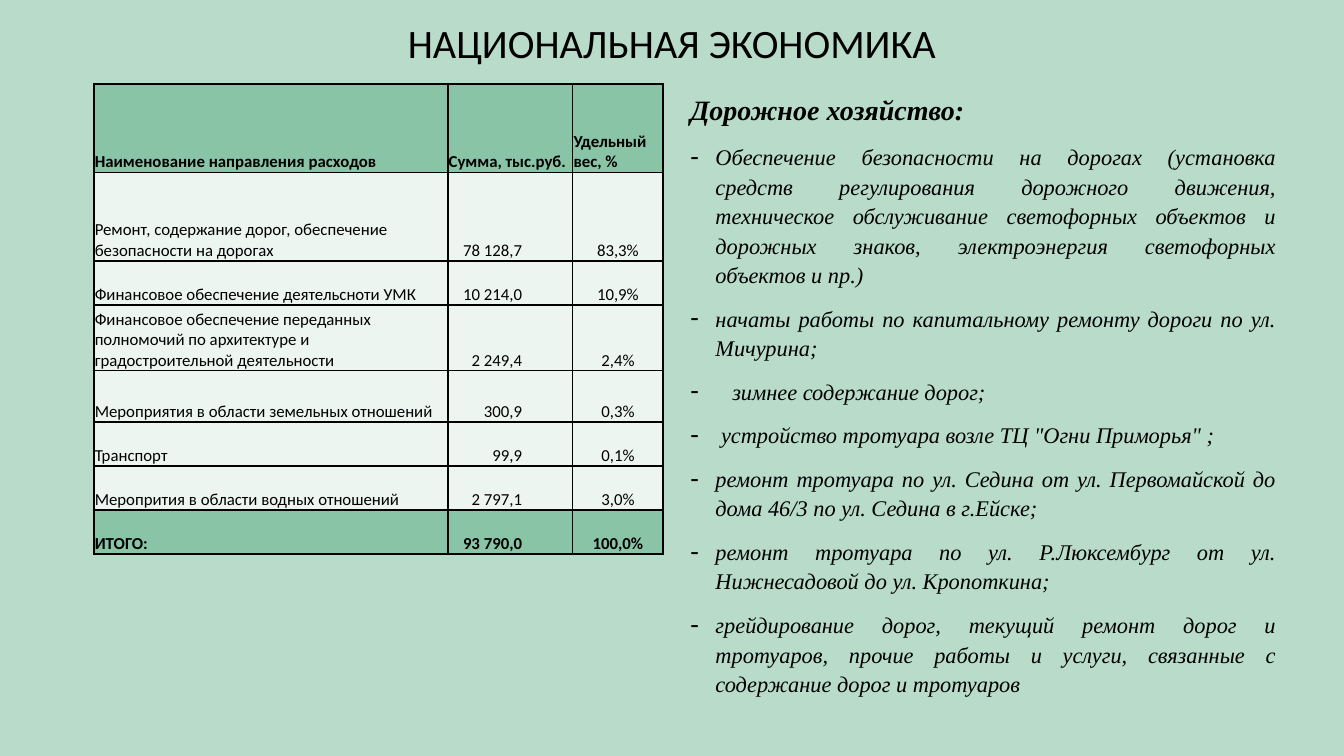
from lxml.etree import SubElement
from pptx import Presentation
from pptx.dml.color import RGBColor
from pptx.enum.text import MSO_ANCHOR, MSO_AUTO_SIZE, PP_ALIGN
from pptx.oxml import parse_xml
from pptx.oxml.ns import nsdecls, qn
from pptx.util import Pt


def color(value):
    return RGBColor.from_string(value)


def format_font(paragraph, name, size, bold=False, italic=False):
    font = paragraph.font
    font.name, font.size = name, Pt(size)
    font.bold, font.italic = bold, italic
    font.color.rgb = color("000000")


presentation = Presentation()
presentation.slide_width, presentation.slide_height = Pt(960), Pt(540)
slide = presentation.slides.add_slide(presentation.slide_layouts[5])
slide.background.fill.solid()
slide.background.fill.fore_color.rgb = color("B9DCCA")

# Title
title = slide.shapes.title
title.left, title.top, title.width, title.height = Pt(90), Pt(18.7), Pt(780), Pt(28)
title.text_frame.text = "НАЦИОНАЛЬНАЯ ЭКОНОМИКА"
title.text_frame.auto_size = MSO_AUTO_SIZE.NONE
title.text_frame.vertical_anchor = MSO_ANCHOR.MIDDLE
paragraph = title.text_frame.paragraphs[0]
paragraph.alignment = PP_ALIGN.CENTER
paragraph.line_spacing = 0.9
format_font(paragraph, "Calibri", 28.8)

# Expense table
expenses = [
    ("Наименование направления расходов", "Сумма, тыс.руб.", "Удельный вес, %"),
    ("Ремонт, содержание дорог, обеспечение безопасности на дорогах", "78 128,7", "83,3%"),
    ("Финансовое обеспечение деятельсноти УМК", "10 214,0", "10,9%"),
    ("Финансовое обеспечение переданных полномочий по архитектуре и "
     "градостроительной деятельности", "2 249,4", "2,4%"),
    ("Мероприятия в области земельных отношений", "300,9", "0,3%"),
    ("Транспорт", "99,9", "0,1%"),
    ("Меропрития в области водных отношений", "2 797,1", "3,0%"),
    ("ИТОГО:", "93 790,0", "100,0%"),
]
column_widths = [252.8, 89.2, 64.8]
row_heights = [63, 63, 31.5, 47, 36.5, 31.5, 31.5, 31.5]
alignments = [PP_ALIGN.LEFT, PP_ALIGN.RIGHT, PP_ALIGN.CENTER]
table = slide.shapes.add_table(
    len(expenses), len(column_widths), Pt(67), Pt(60.2),
    Pt(sum(column_widths)), Pt(sum(row_heights))).table
for column, width in zip(table.columns, column_widths):
    column.width = Pt(width)
for row_index, (row, height, texts) in enumerate(zip(table.rows, row_heights, expenses)):
    row.height = Pt(height)
    is_header = row_index == 0
    is_strong = is_header or row_index == len(expenses) - 1
    for column_index, (cell, text) in enumerate(zip(row.cells, texts)):
        cell.text = text
        cell.vertical_anchor = MSO_ANCHOR.BOTTOM
        cell.margin_left = cell.margin_right = cell.margin_top = Pt(0.7)
        cell.margin_bottom = Pt(0)
        if column_index == 1 and not is_header:
            cell.margin_right = Pt(36)
        cell.fill.solid()
        cell.fill.fore_color.rgb = color("8AC4A7" if is_strong else "EDF5F1")
        paragraph = cell.text_frame.paragraphs[0]
        paragraph.alignment = PP_ALIGN.LEFT if is_header else alignments[column_index]
        format_font(paragraph, "Calibri", 12, bold=is_strong)
        # Borders come before the fill in the cell properties
        for position, side in enumerate(("lnL", "lnR", "lnT", "lnB")):
            border = parse_xml(
                f'<a:{side} {nsdecls("a")} w="{Pt(1.5)}"><a:solidFill>'
                f'<a:srgbClr val="000000"/></a:solidFill></a:{side}>')
            cell._tc.get_or_add_tcPr().insert(position, border)

# Road works: text and left indent of each item
road_works = [
    ("Обеспечение безопасности на дорогах (установка средств регулирования "
     "дорожного движения, техническое обслуживание светофорных объектов и "
     "дорожных знаков, электроэнергия светофорных объектов и пр.)", 18),
    ("начаты работы по капитальному ремонту дороги по ул. Мичурина;", 18),
    ("зимнее содержание дорог;", 30),
    ("устройство тротуара возле ТЦ \"Огни Приморья\" ;", 22),
    ("ремонт тротуара по ул. Седина от ул. Первомайской до дома 46/3 "
     "по ул. Седина в г.Ейске;", 18),
    ("ремонт тротуара по ул. Р.Люксембург от ул. Нижнесадовой до ул. Кропоткина;", 18),
    ("грейдирование дорог, текущий ремонт дорог и тротуаров, прочие работы "
     "и услуги, связанные с содержание дорог и тротуаров", 18),
]
text_frame = slide.shapes.add_textbox(Pt(486), Pt(60.5), Pt(432.5), Pt(443)).text_frame
text_frame.word_wrap = True
heading = text_frame.paragraphs[0]
heading.text = "Дорожное хозяйство:"
heading.line_spacing = 1.1
format_font(heading, "Times New Roman", 20, bold=True, italic=True)
for text, indent in road_works:
    paragraph = text_frame.add_paragraph()
    paragraph.text = text
    paragraph.alignment = PP_ALIGN.JUSTIFY
    paragraph.line_spacing = 1.1
    paragraph.space_before = Pt(10)
    properties = paragraph._p.get_or_add_pPr()
    properties.set("marL", str(Pt(indent)))
    properties.set("indent", str(Pt(-indent)))
    SubElement(properties, qn("a:buSzPct"), val="125000")
    SubElement(properties, qn("a:buFont"), typeface="Calibri")
    SubElement(properties, qn("a:buChar"), char="-")
    format_font(paragraph, "Times New Roman", 16, italic=True)

presentation.save("out.pptx")
